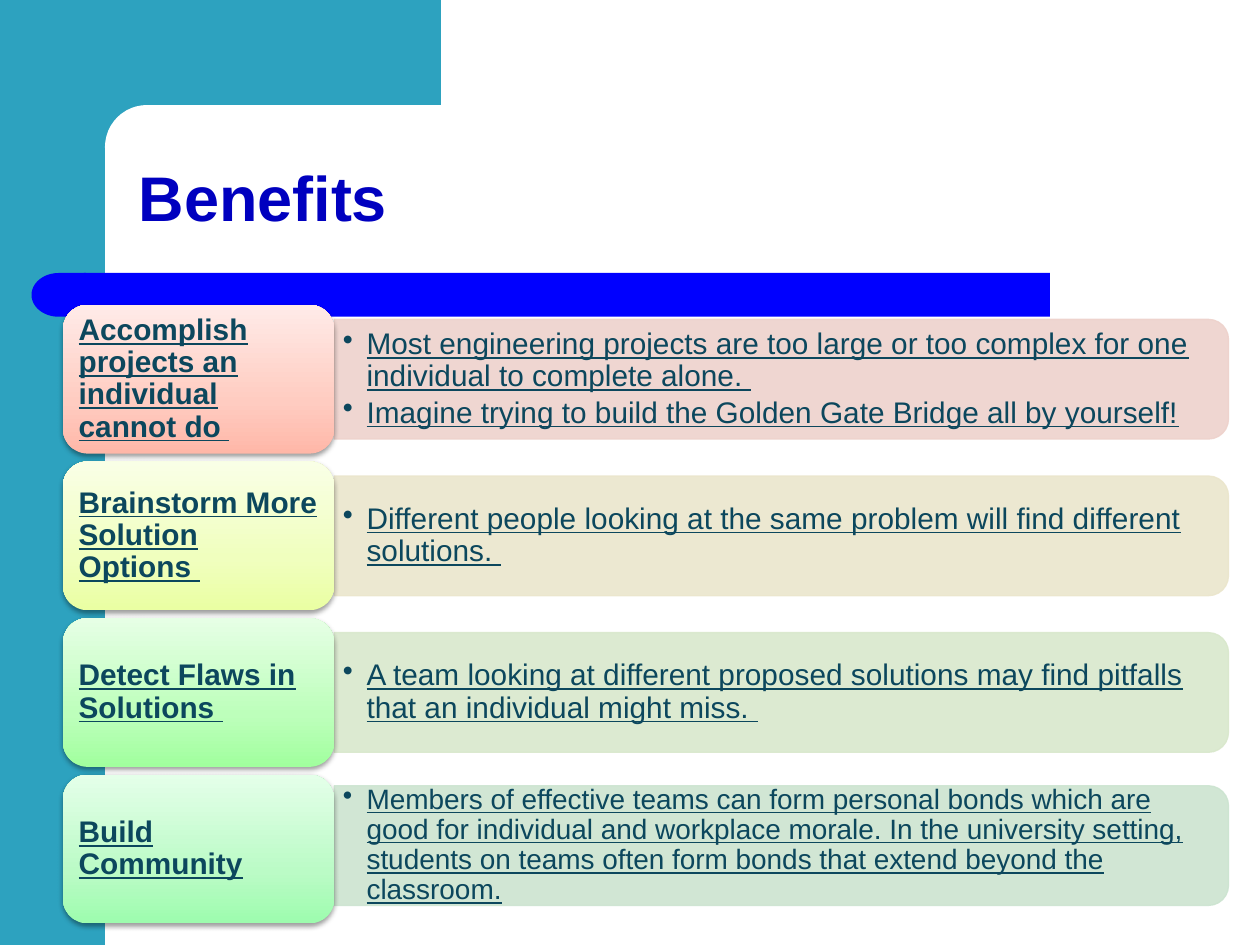
from lxml import etree
from pptx import Presentation
from pptx.dml.color import RGBColor
from pptx.enum.shapes import MSO_SHAPE as SHAPE
from pptx.enum.text import MSO_ANCHOR as ANCHOR, PP_ALIGN as ALIGN
from pptx.oxml import parse_xml
from pptx.oxml.ns import nsdecls, qn
from pptx.util import Pt

TEAL = RGBColor(0x2D, 0xA2, 0xBF)
BLUE = RGBColor(0x00, 0x00, 0xFF)
NAVY = RGBColor(0x00, 0x00, 0xBF)
WHITE = RGBColor(0xFF, 0xFF, 0xFF)
INK = RGBColor(0x0C, 0x47, 0x5D)
ROSE = RGBColor(0xEE, 0xD2, 0xCC)
SAND = RGBColor(0xEB, 0xE6, 0xCC)
LEAF = RGBColor(0xD9, 0xE8, 0xCC)
MINT = RGBColor(0xCC, 0xE4, 0xD0)
CORAL_STOPS = (RGBColor(0xFF, 0xB7, 0xA8), RGBColor(0xFF, 0xCC, 0xC1), RGBColor(0xFF, 0xEB, 0xE8))
LEMON_STOPS = (RGBColor(0xEA, 0xFF, 0xA3), RGBColor(0xF0, 0xFF, 0xBE), RGBColor(0xF9, 0xFF, 0xE6))
LIME_STOPS = (RGBColor(0xA1, 0xFF, 0x9E), RGBColor(0xBD, 0xFF, 0xBB), RGBColor(0xE6, 0xFF, 0xE5))
JADE_STOPS = (RGBColor(0x9D, 0xFC, 0xAE), RGBColor(0xBB, 0xFB, 0xC6), RGBColor(0xE4, 0xFF, 0xE9))

TOP, PITCH = 174.2, 89.5
CARD_X, CARD_W, CARD_H = 36, 155, 85
BAND_W, BAND_H = 511, 68.4

ROWS = [
    (ROSE, CORAL_STOPS, [("Accomplish projects an individual cannot do", True), (" ", False)],
     ["Most engineering projects are too large or too complex for one individual to complete alone. ",
      "Imagine trying to build the Golden Gate Bridge all by yourself!"], 17, 0),
    (SAND, LEMON_STOPS, [("Brainstorm More Solution Options", True), (" ", False)],
     ["Different people looking at the same problem will find different solutions. "], 17, 0),
    (LEAF, LIME_STOPS, [("Detect Flaws in Solutions", True), (" ", False)],
     ["A team looking at different proposed solutions may find pitfalls that an individual might miss. "], 17, 0),
    (MINT, JADE_STOPS, [("Build Community", True)],
     ["Members of effective teams can form personal bonds which are good for individual and workplace "
      "morale. In the university setting, students on teams often form bonds that extend beyond the "
      "classroom."], 16, -2),
]


class Deck:
    font = "Arial"

    def __init__(self, width, height):
        self.prs = Presentation()
        self.prs.slide_width, self.prs.slide_height = Pt(width), Pt(height)
        self.s = self.prs.slides.add_slide(self.prs.slide_layouts[5])

    def run(self, p, text, size, color, bold=False, underline=None):
        r = p.add_run()
        r.text = text
        f = r.font
        f.name, f.size, f.bold, f.underline = self.font, Pt(size), bold, underline
        f.color.rgb = color

    def shape(self, kind, x, y, w, h, color=None, adj=None):
        sp = self.s.shapes.add_shape(kind, Pt(x), Pt(y), Pt(w), Pt(h))
        sp.shadow.inherit = False
        sp.line.fill.background()
        if color is not None:
            sp.fill.solid()
            sp.fill.fore_color.rgb = color
        if adj is not None:
            sp.adjustments[0] = adj
        return sp

    def title(self, text, x, y, w, h):
        sp = self.s.shapes.title
        sp.left, sp.top, sp.width, sp.height = Pt(x), Pt(y), Pt(w), Pt(h)
        self.s.shapes._spTree.append(sp._element)
        tf = sp.text_frame
        tf.word_wrap, tf.vertical_anchor = True, ANCHOR.BOTTOM
        p = tf.paragraphs[0]
        p.alignment, p.line_spacing = ALIGN.LEFT, 0.9
        self.run(p, text, 36, NAVY, bold=True)

    def band(self, x, y, w, h, color):
        sp = self.shape(SHAPE.ROUND_2_SAME_RECTANGLE, x + (w - h) / 2, y + (h - w) / 2, h, w, color)
        sp.rotation = 90
        sp.line.color.rgb = color
        sp.line.width = Pt(0.75)
        for clr in sp._element.spPr.iter(qn("a:srgbClr")):
            etree.SubElement(clr, qn("a:alpha"), val="90000")

    def card(self, x, y, w, h, stops):
        sp = self.shape(SHAPE.ROUNDED_RECTANGLE, x, y, w, h)
        gs = "".join(f'<a:gs pos="{pos}"><a:srgbClr val="{c}"/></a:gs>'
                     for pos, c in zip((0, 35000, 100000), stops))
        spPr = sp._element.spPr
        spPr.insert(2, parse_xml(f'<a:gradFill {nsdecls("a")} rotWithShape="1"><a:gsLst>{gs}</a:gsLst>'
                                 '<a:lin ang="16200000" scaled="0"/></a:gradFill>'))
        spPr.find(qn("a:effectLst")).append(parse_xml(
            f'<a:outerShdw {nsdecls("a")} blurRad="{Pt(3.1)}" dist="{Pt(1.6)}" dir="5400000" '
            'rotWithShape="0"><a:srgbClr val="000000"><a:alpha val="38000"/></a:srgbClr></a:outerShdw>'))

    def text(self, x, y, w, h, paragraphs, size, space_after, bullets=False):
        tf = self.s.shapes.add_textbox(Pt(x), Pt(y), Pt(w), Pt(h)).text_frame
        tf.word_wrap, tf.vertical_anchor = True, ANCHOR.MIDDLE
        tf.margin_left = tf.margin_right = Pt(5)
        tf.margin_top = tf.margin_bottom = Pt(2.7)
        for i, runs in enumerate(paragraphs):
            p = tf.add_paragraph() if i else tf.paragraphs[0]
            p.line_spacing, p.space_after = 0.9, Pt(space_after)
            if bullets:
                p.level = 1
                pPr = p._p.get_or_add_pPr()
                pPr.set("marL", str(Pt(13.5)))
                pPr.set("indent", str(-Pt(13.5)))
                etree.SubElement(pPr, qn("a:buChar"), char="•")
            for text, bold in runs:
                self.run(p, text, size, INK, bold, underline=True)


def main():
    d = Deck(720, 540)
    d.shape(SHAPE.RECTANGLE, 0, 0, 60, 540, TEAL)
    d.shape(SHAPE.RECTANGLE, 54, 0, 198, 84, TEAL)
    d.shape(SHAPE.ROUNDED_RECTANGLE, 60, 60, 402, 48, WHITE, adj=0.5)
    d.shape(SHAPE.ROUNDED_RECTANGLE, 48, 156, 552, 25, BLUE, adj=0)
    d.shape(SHAPE.FLOWCHART_DELAY, 18, 156, 31, 25, BLUE).rotation = 180
    d.title("Benefits", 72, 60, 630, 78)

    band_x = CARD_X + CARD_W
    for i, (color, stops, label, points, size, shift) in enumerate(ROWS):
        y = TOP + i * PITCH
        band_y = y + (CARD_H - BAND_H) / 2 + shift
        d.band(band_x, band_y, BAND_W, BAND_H, color)
        d.text(band_x, band_y + 3.5, BAND_W - 3.5, BAND_H - 7,
               [[(point, False)] for point in points], size, 2.6, bullets=True)
        d.card(CARD_X, y, CARD_W, CARD_H, stops)
        d.text(CARD_X + 4, y + 4, CARD_W - 8, CARD_H - 8, [label], 17, 6)
    d.prs.save("out.pptx")


if __name__ == "__main__":
    main()
